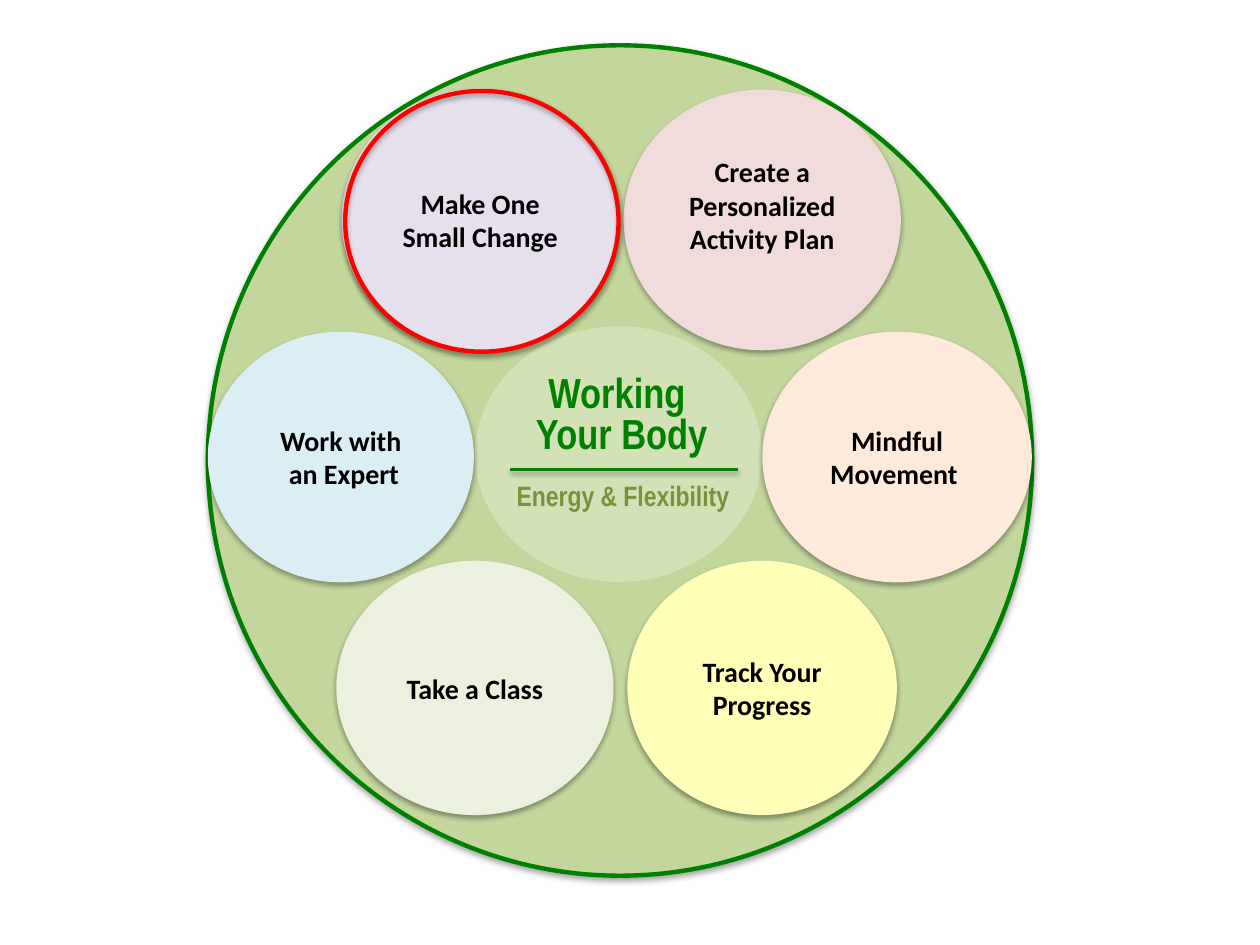
from pptx import Presentation
from pptx.dml.color import RGBColor
from pptx.enum.shapes import MSO_CONNECTOR, MSO_SHAPE
from pptx.enum.text import MSO_ANCHOR, PP_ALIGN
from pptx.oxml.ns import qn
from pptx.util import Pt
from lxml.etree import SubElement

COLORS = {
    "green": "008000", "olive": "77933C", "wheel": "C3D69B", "pale": "EBF1DE",
    "blue": "DBEEF4", "lilac": "E6E0EC", "pink": "F2DCDB", "peach": "FDEADA",
    "yellow": "FFFFB8", "red": "FF0000", "black": "000000",
}
LABEL = {"name": "Calibri", "size": Pt(16), "bold": True}
TITLE = {"name": "Arial Narrow", "size": Pt(24), "bold": True}
SUBTITLE = {**TITLE, "size": Pt(16)}


class Diagram:
    def __init__(self, slide):
        self.s = slide

    def color(self, name):
        return RGBColor.from_string(COLORS[name])

    def effects(self, sp, alpha=None):
        """Add an effect list: a soft shadow below, or empty without alpha."""
        lst = SubElement(sp._element.spPr, qn("a:effectLst"))
        if alpha:
            shadow = SubElement(lst, qn("a:outerShdw"), blurRad=str(Pt(3.1)),
                                dist=str(Pt(1.8)), dir="5400000", rotWithShape="0")
            clr = SubElement(shadow, qn("a:srgbClr"), val=COLORS["black"])
            SubElement(clr, qn("a:alpha"), val=str(alpha * 1000))

    def fill_text(self, tf, lines, fmt, color, spacing=None):
        tf.word_wrap = True
        for i, line in enumerate(lines):
            p = tf.paragraphs[0] if i == 0 else tf.add_paragraph()
            p.alignment = PP_ALIGN.CENTER
            if spacing:
                p.line_spacing = spacing
            r = p.add_run()
            r.text = line
            for key, value in fmt.items():
                setattr(r.font, key, value)
            r.font.color.rgb = self.color(color)

    def ellipse(self, box, fill=None, line=None, opacity=None, shadow=35):
        sp = self.s.shapes.add_shape(MSO_SHAPE.OVAL, *map(Pt, box))
        if fill:
            sp.fill.solid()
            sp.fill.fore_color.rgb = self.color(fill)
            if opacity:
                clr = sp._element.spPr.find(qn("a:solidFill"))[0]
                SubElement(clr, qn("a:alpha"), val=str(opacity * 1000))
        else:
            sp.fill.background()
        if line:
            sp.line.color.rgb = self.color(line)
            sp.line.width = Pt(2.5)
        else:
            sp.line.fill.background()
        self.effects(sp, shadow)
        return sp

    def topic(self, box, fill, lines, bottom=3.6):
        tf = self.ellipse(box, fill).text_frame
        tf.vertical_anchor = MSO_ANCHOR.MIDDLE
        tf.margin_bottom = Pt(bottom)
        self.fill_text(tf, lines, LABEL, "black")

    def text(self, box, lines, fmt, color, spacing=None):
        tf = self.s.shapes.add_textbox(*map(Pt, box)).text_frame
        self.fill_text(tf, lines, fmt, color, spacing)

    def rule(self, x1, x2, y):
        c = self.s.shapes.add_connector(MSO_CONNECTOR.STRAIGHT, Pt(x1), Pt(y), Pt(x2), Pt(y))
        c.line.color.rgb = self.color("green")
        c.line.width = Pt(1.5)
        self.effects(c, 38)


def main():
    prs = Presentation()
    prs.slide_width, prs.slide_height = Pt(720), Pt(540)
    d = Diagram(prs.slides.add_slide(prs.slide_layouts[6]))

    # Wheel and hub
    d.ellipse((118.8, 25.9, 471, 474.5), "wheel", "green")
    d.ellipse((271.5, 186.5, 164, 146), "pale", opacity=42, shadow=None)
    d.text((226, 211.7, 258.5, 58.3), ["Working ", "Your Body"], TITLE, "green", 0.8)
    d.text((208, 270, 296, 28), ["Energy & Flexibility"], SUBTITLE, "olive")

    # Topics around the hub
    topics = [
        ((118.8, 189.5, 152, 143.3), "blue", ["Work with", " an Expert"]),
        ((195.2, 50.5, 158.4, 150.3), "lilac", ["Make One Small Change"]),
        ((356.4, 51.2, 158.4, 149), "pink", ["Create a Personalized Activity Plan"], 20.6),
        ((435.6, 189.5, 154, 143.3), "peach", ["Mindful Movement "]),
        ((358.5, 320.4, 154, 145.4), "yellow", ["Track Your Progress"]),
        ((192.2, 320.4, 158.4, 145.4), "pale", ["Take a Class"]),
    ]
    for topic in topics:
        d.topic(*topic)

    # Hub divider and highlight ring
    d.rule(291.6, 422, 268.4)
    d.ellipse((197.3, 52, 156.2, 149), line="red")

    prs.save("out.pptx")


if __name__ == "__main__":
    main()
